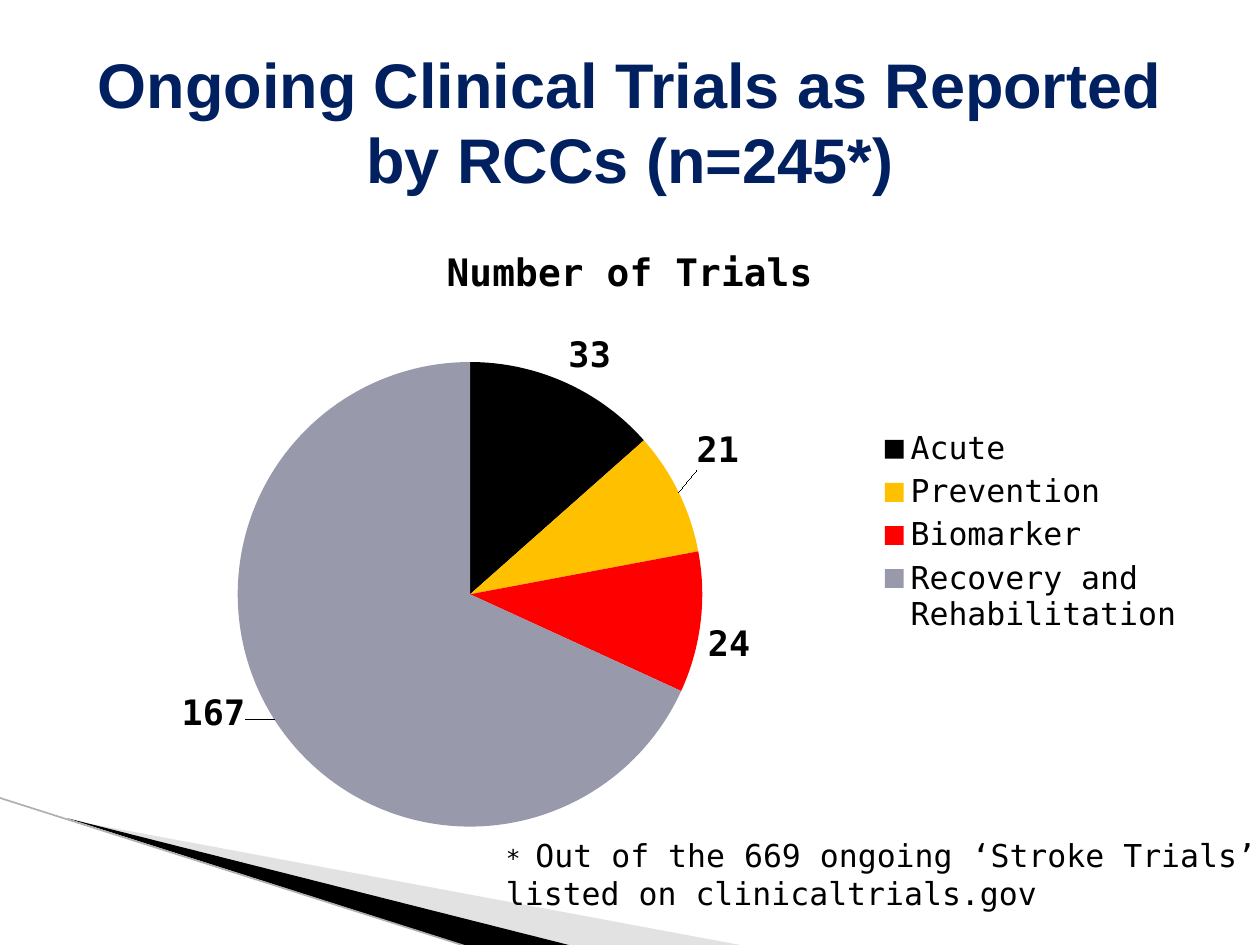
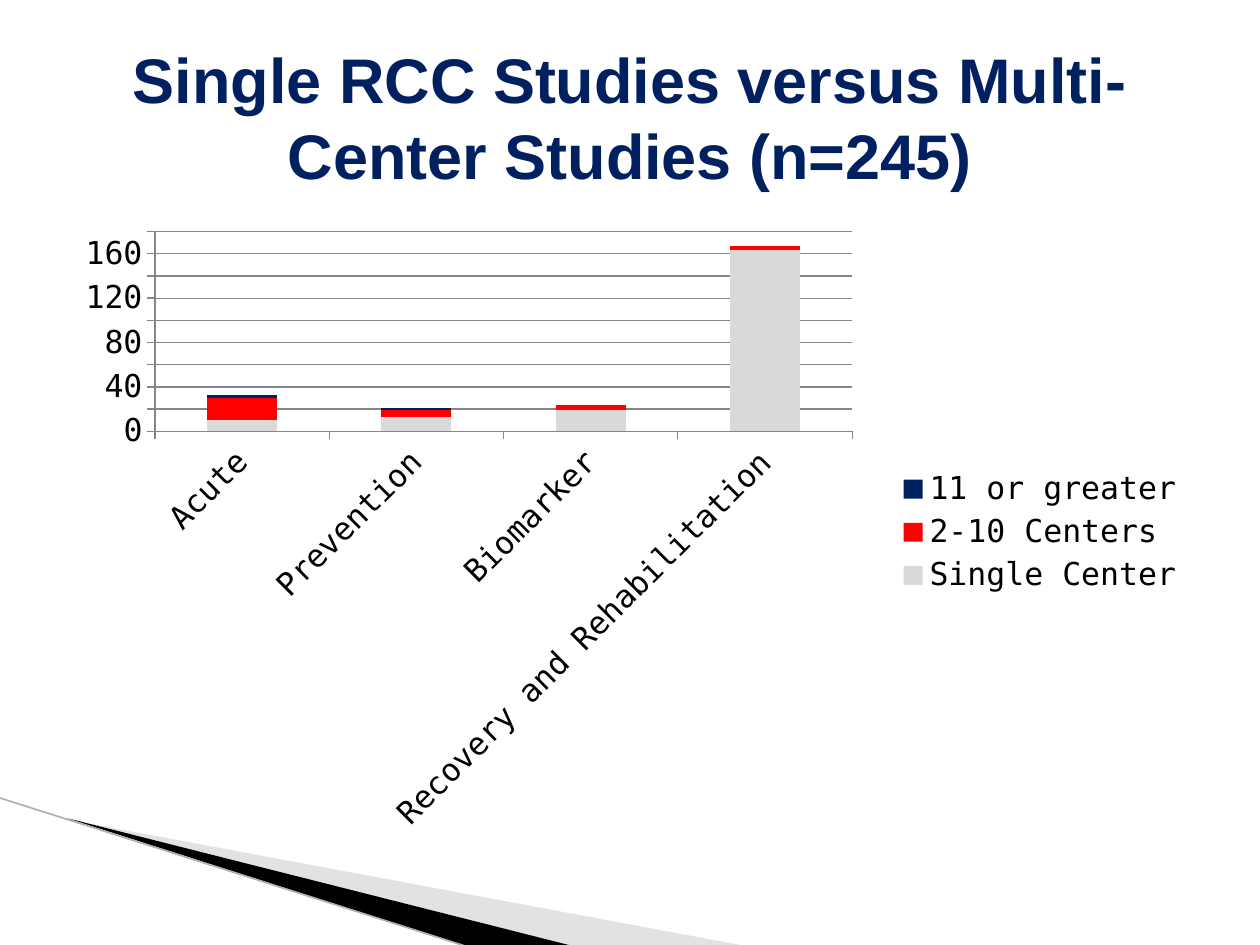
from lxml import etree
from pptx import Presentation
from pptx import util as u
from pptx.chart import data as chart_data
from pptx.dml.color import RGBColor
from pptx.enum import chart as chart_enum, shapes, text
from pptx.oxml import parse_xml
from pptx.oxml.ns import nsdecls, qn

NAVY = RGBColor(0x00, 0x20, 0x60)
BLACK = RGBColor(0x00, 0x00, 0x00)
AMBER = RGBColor(0xFF, 0xC0, 0x00)
RED = RGBColor(0xFF, 0x00, 0x00)
SLATE = RGBColor(0x98, 0x9A, 0xAC)
SILVER = RGBColor(0xD9, 0xD9, 0xD9)
WEDGE_GREY = RGBColor(0xB8, 0xB8, 0xB8)
LINE_GREY = RGBColor(0xB0, 0xB0, 0xB0)
GRID_GREY = RGBColor(0x86, 0x86, 0x86)

MONO = "DejaVu Sans Mono"
TITLE_FONT = {"name": "Arial", "size": u.Pt(36), "bold": True}
BODY_FONT = {"name": MONO, "size": u.Pt(18), "bold": False}
MARK_FONT = {"name": MONO, "size": u.Pt(14), "bold": False}
LABEL_FONT = {"name": MONO, "size": u.Pt(20), "bold": True}
HEADING_FONT = {"name": MONO, "size": u.Pt(21.6), "bold": True}

CHART_BOX = (36, 126, 648, 356.4)
BAND_BOX = (0, 456, 428.4, 85)
PHASES = ["Acute", "Prevention", "Biomarker", "Recovery and Rehabilitation"]
PHASE_COLORS = [BLACK, AMBER, RED, SLATE]
TRIAL_COUNTS = [33, 21, 24, 167]
LABEL_SHIFTS = {1: (0.01, -0.03), 3: (-0.02, -0.05)}
CENTER_SERIES = [
    ("Single Center", [10, 13, 19, 163], SILVER),
    ("2-10 Centers", [20, 6, 5, 4], RED),
    ("11 or greater", [3, 2, 0, 0], NAVY),
]


def points(box):
    """Convert a box of point values to lengths."""
    return [u.Pt(value) for value in box]


def style(target, values, color=None):
    """Set attributes from a dict, and the font colour when given."""
    for name, value in values.items():
        setattr(target, name, value)
    if color is not None:
        target.color.rgb = color


def layout_xml(**values):
    """Return a manual chart layout holding the given fractions."""
    children = "".join(f'<c:{name} val="{value}"/>' for name, value in values.items())
    return parse_xml(f'<c:layout {nsdecls("c")}><c:manualLayout>{children}'
                     "</c:manualLayout></c:layout>")


def add_wedge(page, box, corners, color, opacity=100):
    """Draw a filled wedge whose corners are relative to the box."""
    left, top = box[:2]
    outline = [(u.Pt(left + x), u.Pt(top + y)) for x, y in corners]
    builder = page.shapes.build_freeform(*outline[0], scale=1.0)
    builder.add_line_segments(outline[1:], close=True)
    wedge = builder.convert_to_shape()
    wedge.shadow.inherit = False
    wedge.fill.solid()
    wedge.fill.fore_color.rgb = color
    wedge.line.fill.background()
    if opacity < 100:
        fill_color = wedge.fill._xPr.find(".//" + qn("a:srgbClr"))
        etree.SubElement(fill_color, qn("a:alpha"), val=str(opacity * 1000))


def add_corner_band(page, box):
    """Draw the swoosh in the lower left corner."""
    left, top, width, height = box
    add_wedge(page, box, [(39.6, 12.5), (width, height), (328.3, height)], WEDGE_GREY, 40)
    add_wedge(page, box, [(38.2, 11.5), (329, height), (267.8, height)], BLACK)
    edge = page.shapes.add_connector(
        shapes.MSO_CONNECTOR.STRAIGHT, *points((left, top, left + 267.1, top + height)))
    edge.line.color.rgb = LINE_GREY
    edge.line.width = u.Pt(0.95)
    etree.SubElement(edge._element.spPr, qn("a:effectLst"))


def add_page(deck, heading, title_top):
    """Add a slide with its title and corner band."""
    page = deck.slides.add_slide(deck.slide_layouts[5])
    title = page.shapes.title
    title.left, title.top, title.width, title.height = points((36, title_top, 648, 90))
    frame = title.text_frame
    frame.text = heading
    style(frame, {"word_wrap": True, "auto_size": text.MSO_AUTO_SIZE.NONE,
                  "vertical_anchor": text.MSO_ANCHOR.MIDDLE})
    para = frame.paragraphs[0]
    para.alignment = text.PP_ALIGN.CENTER
    style(para.runs[0].font, TITLE_FONT, NAVY)
    add_corner_band(page, BAND_BOX)
    return page


def add_phase_chart(page, box, kind, series, plot_box):
    """Add a chart by trial phase with a legend on the right."""
    source = chart_data.CategoryChartData()
    source.categories = PHASES
    for name, values in series:
        source.add_series(name, values)
    chart = page.shapes.add_chart(kind, *points(box), source).chart
    style(chart.font, BODY_FONT, BLACK)
    chart.has_legend = True
    style(chart.legend, {"position": chart_enum.XL_LEGEND_POSITION.RIGHT,
                         "include_in_layout": False})
    plot_area = chart.element.find(".//" + qn("c:plotArea"))
    for old_layout in plot_area.findall(qn("c:layout")):
        plot_area.remove(old_layout)
    plot_area.insert(0, layout_xml(layoutTarget="inner", xMode="edge", yMode="edge",
                                   **dict(zip("xywh", plot_box))))
    return chart


def add_trials_pie(page, box):
    """Draw the pie of trial counts with a value beside each slice."""
    name = "Number of Trials"
    chart = add_phase_chart(page, box, chart_enum.XL_CHART_TYPE.PIE,
                            [(name, TRIAL_COUNTS)], (0.154, 0.227, 0.41, 0.745))
    chart.has_title = True
    chart.chart_title.include_in_layout = False
    frame = chart.chart_title.text_frame
    frame.text = name
    style(frame.paragraphs[0].runs[0].font, HEADING_FONT, BLACK)
    plot = chart.plots[0]
    plot.vary_by_categories = True
    for index, color in enumerate(PHASE_COLORS):
        piece = plot.series[0].points[index]
        piece.format.fill.solid()
        piece.format.fill.fore_color.rgb = color
        label = piece.data_label
        style(label.font, LABEL_FONT, BLACK)
        label.position = chart_enum.XL_LABEL_POSITION.OUTSIDE_END
    for mark in chart.element.iter(qn("c:dLbl")):
        index = mark.find(qn("c:idx"))
        shift = LABEL_SHIFTS.get(int(index.get("val")))
        if shift:
            index.addnext(layout_xml(x=shift[0], y=shift[1]))


def add_centers_columns(page, box):
    """Draw the stacked columns of studies by number of centers."""
    chart = add_phase_chart(page, box, chart_enum.XL_CHART_TYPE.COLUMN_STACKED,
                            [entry[:2] for entry in CENTER_SERIES],
                            (0.081, 0.018, 0.615, 0.32))
    chart.has_title = False
    plot = chart.plots[0]
    style(plot, {"gap_width": 150, "overlap": 100, "vary_by_categories": False})
    for series, (_, _, color) in zip(plot.series, CENTER_SERIES):
        series.format.fill.solid()
        series.format.fill.fore_color.rgb = color
    style(chart.value_axis, {"minimum_scale": 0, "maximum_scale": 180, "major_unit": 20,
                             "has_major_gridlines": True})
    for axis in (chart.category_axis, chart.value_axis):
        axis.major_tick_mark = chart_enum.XL_TICK_MARK.OUTSIDE
        axis.format.line.color.rgb = GRID_GREY
        style(axis.tick_labels.font, BODY_FONT, BLACK)
    chart.value_axis.major_gridlines.format.line.color.rgb = GRID_GREY
    label_body = chart.category_axis._element.find(qn("c:txPr")).find(qn("a:bodyPr"))
    label_body.set("rot", "-2700000")


def add_footnote(page, box):
    """Add the note that explains the asterisk."""
    frame = page.shapes.add_textbox(*points(box)).text_frame
    style(frame, {"word_wrap": True, "auto_size": text.MSO_AUTO_SIZE.SHAPE_TO_FIT_TEXT})
    para = frame.paragraphs[0]
    for words, values in (
        ("* ", MARK_FONT),
        ("Out of the 669 ongoing ‘Stroke Trials’ listed on clinicaltrials.gov", BODY_FONT),
    ):
        span = para.add_run()
        span.text = words
        style(span.font, values, BLACK)


def main():
    """Build both slides and save the deck."""
    deck = Presentation()
    deck.slide_width, deck.slide_height = points((720, 540))
    trials = add_page(deck, "Ongoing Clinical Trials as Reported by RCCs (n=245*)", 24)
    add_trials_pie(trials, CHART_BOX)
    add_footnote(trials, (282, 474, 480, 51))
    centers = add_page(deck, "Single RCC Studies versus Multi-Center Studies (n=245)", 21.6)
    add_centers_columns(centers, CHART_BOX)
    deck.save("out.pptx")


if __name__ == "__main__":
    main()
